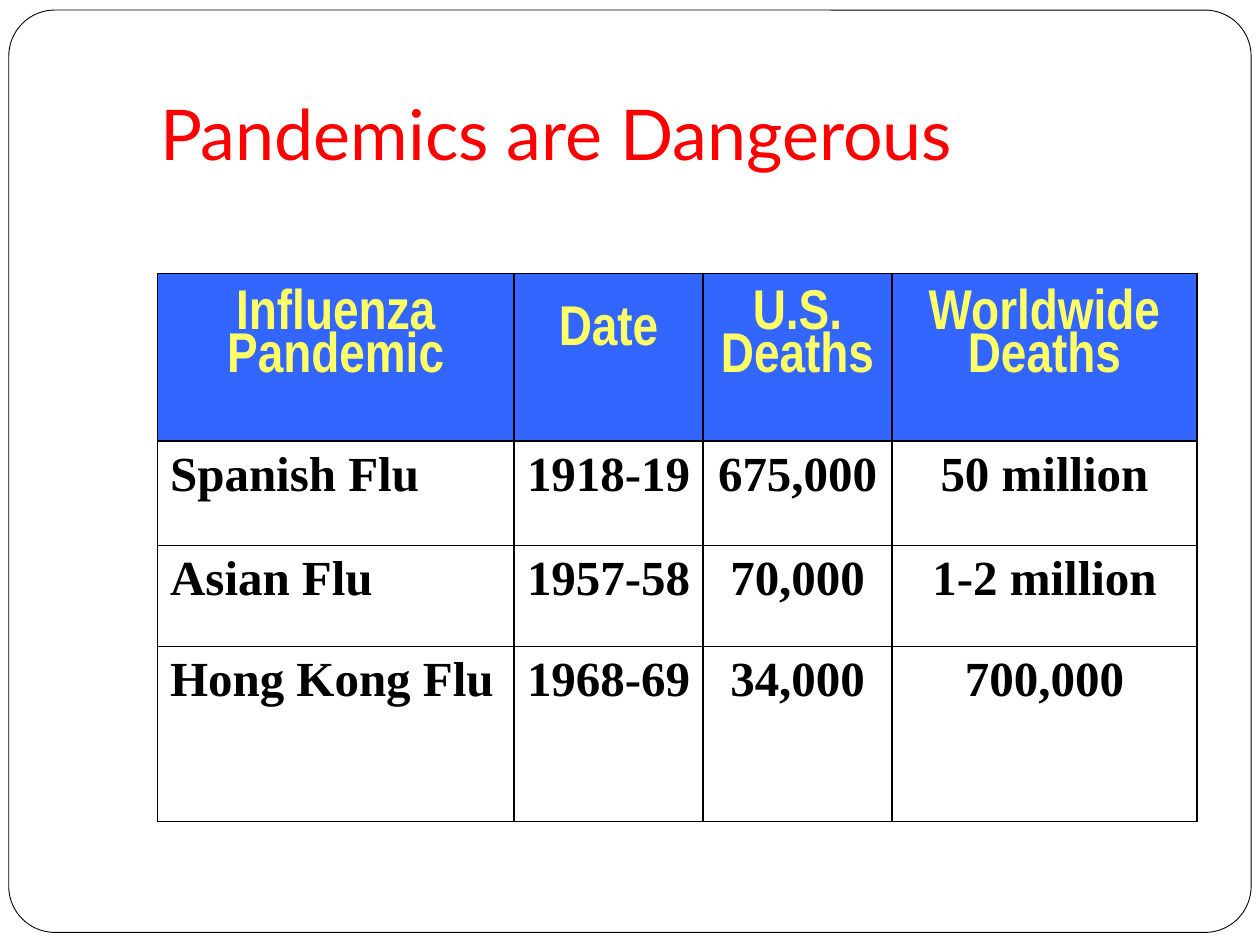
"""Build the slide that compares the deaths of three influenza pandemics."""
from lxml import etree
from pptx import Presentation
from pptx import util as u
from pptx.dml.color import RGBColor
from pptx.enum import shapes, text
from pptx.oxml.ns import qn

BLACK = RGBColor(0x00, 0x00, 0x00)
WHITE = RGBColor(0xFF, 0xFF, 0xFF)
RED = RGBColor(0xFF, 0x00, 0x00)
BLUE = RGBColor(0x33, 0x66, 0xFF)
YELLOW = RGBColor(0xFF, 0xFF, 0x66)

TITLE = {"name": "Lato", "size": u.Pt(40), "bold": False}
HEAD = {"name": "Arial Narrow", "size": u.Pt(32), "bold": True}
BODY = {"name": "Times New Roman", "size": u.Pt(28), "bold": True}

WIDTHS = (2.83, 1.5, 1.5, 2.42)
HEIGHTS = (1.33, 0.83, 0.8, 1.39)
TOPS = (0.17, 0.3, 0.17, 0.17)
ROWS = (
    ("Influenza\nPandemic", "Date", "U.S. Deaths", "Worldwide Deaths"),
    ("Spanish Flu", "1918-19", "675,000", "50 million"),
    ("Asian Flu", "1957-58", "70,000", "1-2 million"),
    ("Hong Kong Flu", "1968-69", "34,000", "700,000"),
)


def write(frame, words, look, color, align, space=1.0):
    """Put words in a text frame and format each paragraph."""
    frame.text = words
    for para in frame.paragraphs:
        para.alignment = align
        para.line_spacing = space
        for run in para.runs:
            for key, value in look.items():
                setattr(run.font, key, value)
            run.font.color.rgb = color


def place(shape, left, top, width, height):
    """Set the position and size of a shape in inches."""
    box = {"left": left, "top": top, "width": width, "height": height}
    for key, value in box.items():
        setattr(shape, key, u.Inches(value))


def add_title(slide):
    """Fill and move the title placeholder."""
    title = slide.shapes.title
    place(title, 1.17, 0.67, 6.57, 0.77)
    write(title.text_frame, "Pandemics are Dangerous", TITLE, RED,
          text.PP_ALIGN.LEFT)
    title.text_frame.auto_size = text.MSO_AUTO_SIZE.NONE
    title.text_frame.vertical_anchor = text.MSO_ANCHOR.MIDDLE


def add_panel(slide):
    """Draw the rounded page frame behind the title."""
    panel = slide.shapes.add_shape(
        shapes.MSO_SHAPE.ROUNDED_RECTANGLE,
        *map(u.Inches, (0.07, 0.08, 9.86, 7.32)))
    panel.adjustments[0] = 0.05
    panel.shadow.inherit = False
    panel.fill.solid()
    panel.fill.fore_color.rgb = WHITE
    panel.line.color.rgb = BLACK
    panel.line.width = u.Pt(0.5)
    slide.shapes.title.element.addprevious(panel.element)


def add_lines(frame):
    """Give every table cell a thin black border."""
    for prop in frame.element.iter(qn("a:tcPr")):
        for spot, side in enumerate(("a:lnL", "a:lnR", "a:lnT", "a:lnB")):
            line = etree.Element(qn(side), w=str(u.Pt(1)))
            fill = etree.SubElement(line, qn("a:solidFill"))
            etree.SubElement(fill, qn("a:srgbClr"), val=str(BLACK))
            prop.insert(spot, line)


def add_cell(cell, words, row, col):
    """Write and colour one table cell."""
    head = row == 0
    cell.fill.solid()
    cell.fill.fore_color.rgb = BLUE if head else WHITE
    left = col == 0 and not head
    align = text.PP_ALIGN.LEFT if left else text.PP_ALIGN.CENTER
    if head:
        cell.margin_top = u.Inches(TOPS[col])
        write(cell.text_frame, words, HEAD, YELLOW, align, 0.82)
    else:
        write(cell.text_frame, words, BODY, BLACK, align)


def add_grid(slide):
    """Add the table of pandemics."""
    frame = slide.shapes.add_table(
        len(ROWS), len(WIDTHS), u.Inches(1.25), u.Inches(2.17),
        u.Inches(sum(WIDTHS)), u.Inches(sum(HEIGHTS)))
    table = frame.table
    for col, width in zip(table.columns, WIDTHS):
        col.width = u.Inches(width)
    for row, height in zip(table.rows, HEIGHTS):
        row.height = u.Inches(height)
    for row, line in enumerate(ROWS):
        for col, words in enumerate(line):
            add_cell(table.cell(row, col), words, row, col)
    add_lines(frame)


def main():
    """Build and save the slide."""
    deck = Presentation()
    deck.slide_width, deck.slide_height = u.Inches(10), u.Inches(7.5)
    slide = deck.slides.add_slide(deck.slide_layouts[5])
    add_title(slide)
    add_panel(slide)
    add_grid(slide)
    deck.save("out.pptx")


if __name__ == "__main__":
    main()
